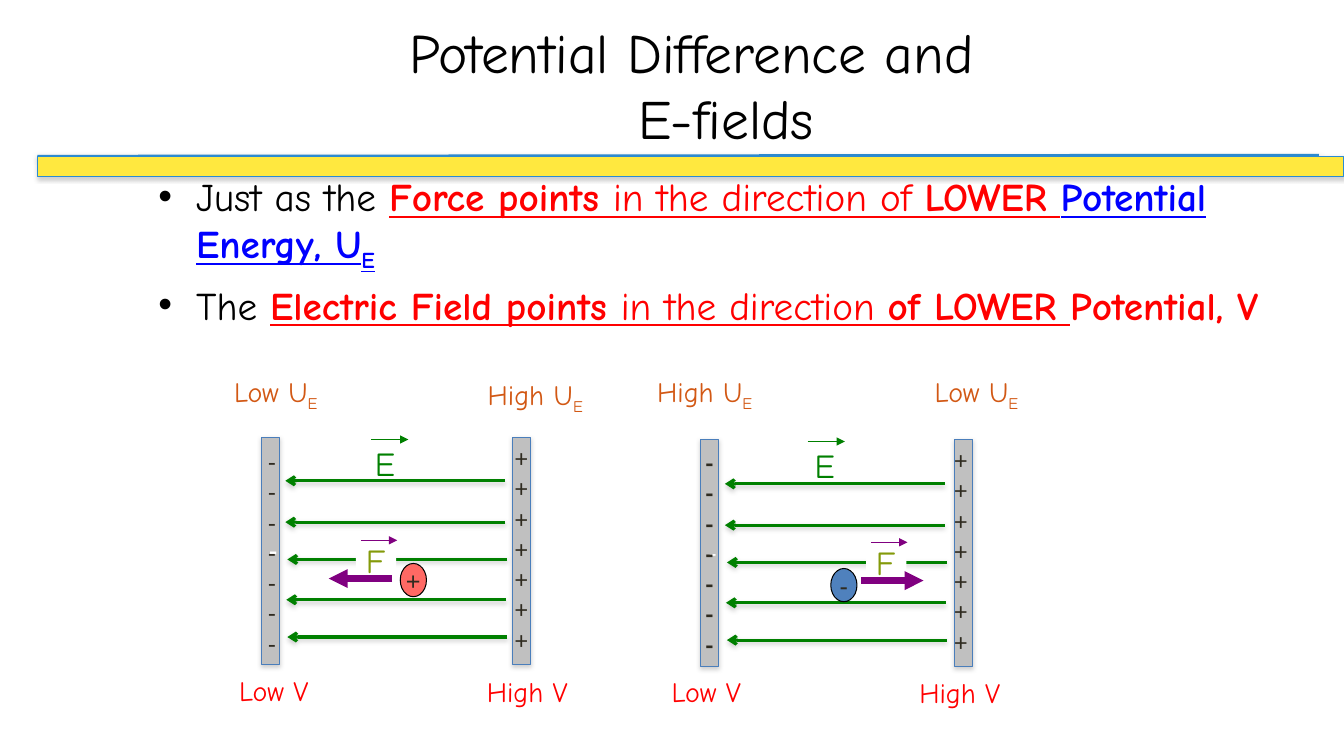
"""Build a slide on potential difference and electric fields between charged plates."""
from lxml.etree import SubElement
from pptx import Presentation
from pptx.dml.color import RGBColor
from pptx.enum.shapes import MSO_CONNECTOR, MSO_SHAPE as Kind
from pptx.enum.text import MSO_ANCHOR as Anchor, MSO_AUTO_SIZE as AutoSize, PP_ALIGN as Align
from pptx.oxml import parse_xml
from pptx.oxml.ns import qn
from pptx.util import Pt

PX = 9144
COMIC = "Comic Neue"
COLORS = {
    "black": "000000", "white": "FFFFFF", "red": "FF0000", "blue": "0000FF",
    "rule": "2B8BD2", "yellow": "FFE83F", "plate": "C0C0C0", "plate edge": "4A7EBB",
    "sign": "2F2B20", "field": "008000", "force": "800080", "force label": "849A0A",
    "energy": "D25814", "positive": "FF6964", "negative": "4F81BD",
}
COLORS = {name: RGBColor.from_string(value) for name, value in COLORS.items()}
NO_EFFECT = '<a:effectLst xmlns:a="http://schemas.openxmlformats.org/drawingml/2006/main"/>'
SHADOW = NO_EFFECT.replace("/>", (
    '><a:outerShdw blurRad="40000" dist="22000" dir="5400000" rotWithShape="0">'
    '<a:srgbClr val="808080"><a:alpha val="36000"/></a:srgbClr></a:outerShdw></a:effectLst>'))

deck = Presentation()
deck.slide_width, deck.slide_height = 1333 * PX, 750 * PX
page = deck.slides.add_slide(deck.slide_layouts[1])


def add_box(place, text="", color="sign", size=18, font="Calibri", bold=False, align=Align.CENTER,
            kind=None, fill=None, edge=None, shadow=False, wrap=False):
    place = [length * PX for length in place]
    if kind is None:
        box = page.shapes.add_textbox(*place)
        box.text_frame.auto_size = AutoSize.SHAPE_TO_FIT_TEXT
    else:
        box = page.shapes.add_shape(kind, *place)
        box.text_frame.vertical_anchor = Anchor.MIDDLE
        box.line.color.rgb = COLORS[edge]
        box.line.width = Pt(0.75)
        if shadow:
            box._element.spPr.append(parse_xml(SHADOW))
        else:
            box.shadow.inherit = False
    if fill:
        box.fill.solid()
        box.fill.fore_color.rgb = COLORS[fill]
    box.text_frame.word_wrap = wrap
    box.text_frame.text = text
    for para in box.text_frame.paragraphs:
        para.alignment = align
        para.font.name, para.font.size, para.font.bold = font, Pt(size), bold
        para.font.color.rgb = COLORS[color]
    return box


def add_line(start, end, color, width, head=None, shadow=False):
    ends = [length * PX for length in (*start, *end)]
    line = page.shapes.add_connector(MSO_CONNECTOR.STRAIGHT, *ends)
    line.line.color.rgb = COLORS[color]
    line.line.width = Pt(width)
    if head:
        SubElement(line.line._get_or_add_ln(), qn("a:tailEnd"), type=head)
    line._element.spPr.append(parse_xml(SHADOW if shadow else NO_EFFECT))


add_line((37, 155), (1308, 154), "rule", 2, shadow=True)
add_box((37, 155, 1296, 20), kind=Kind.RECTANGLE, fill="yellow", edge="rule", shadow=True)

title, body = page.placeholders
for holder, place in ((title, (245, 25, 900, 117)), (body, (147, 166, 1133, 259))):
    holder.left, holder.top, holder.width, holder.height = [length * PX for length in place]
    holder.text_frame.auto_size = AutoSize.NONE
title.text_frame.text = "Potential Difference and \v\tE-fields"
title.text_frame.vertical_anchor = Anchor.MIDDLE
heading = title.text_frame.paragraphs[0]
heading.alignment = Align.CENTER
heading.font.name, heading.font.size = COMIC, Pt(39.6)
heading.font.color.rgb = COLORS["black"]

bullets = [
    [("Just as the ", "black", False, False), ("Force points ", "red", True, True),
     ("in the direction of ", "red", False, True), ("LOWER ", "red", True, True),
     ("Potential Energy, U", "blue", True, True), ("E", "blue", True, True)],
    [("The ", "black", False, False), ("Electric Field points ", "red", True, True),
     ("in the direction ", "red", False, True), ("of LOWER ", "red", True, True),
     ("Potential, V", "red", True, False)],
]
body.text_frame.text = "\n".join("" for bullet in bullets)
for index, (para, bullet) in enumerate(zip(body.text_frame.paragraphs, bullets)):
    para.space_before = Pt(5.6 * index)
    para.font.name, para.font.size = COMIC, Pt(28)
    for text, color, bold, underline in bullet:
        span = para.add_run()
        span.text = text
        span.font.bold, span.font.underline = bold, underline
        span.font.color.rgb = COLORS[color]
        if text == "E":
            span._r.get_or_add_rPr().set("baseline", "-25000")

panels = [
    dict(plates=(259, 508), top=434, signs=((256, 438), (501, 434)), bold=False, inner_bold=True,
         field=(283, 477), label=362, vector=368, charge=("+", "positive", 397, 559),
         force_label=353, force=(389, 326)),
    dict(plates=(695, 947), top=436, signs=((690, 439), (937, 436)), bold=True, inner_bold=False,
         field=(719, 480), label=798, vector=801, charge=("-", "negative", 824, 564),
         force_label=859, force=(854, 916)),
]
for panel in panels:
    top = panel["top"]
    for x, mark in zip(panel["plates"], ("-", "")):
        add_box((x, top, 18, 225), mark, "white", bold=panel["inner_bold"], kind=Kind.RECTANGLE,
                fill="plate", edge="plate edge", shadow=True, wrap=True)
    for (x, y), mark, width, bold in zip(panel["signs"], "-+", (28, 33), (panel["bold"], False)):
        add_box((x, y, width, 220), "\n".join(mark * 7), bold=bold, align=Align.LEFT)

    left, first = panel["field"]
    for dx, dy in ((0, 0), (0, 41), (2, 78), (1, 118), (2, 155)):
        add_line((left + dx + 218, first + dy), (left + dx, first + dy), "field", 2.25, "arrow", True)
    add_box((panel["label"], top, 41, 50), "E", "field", 24, COMIC, align=Align.LEFT)
    add_line((panel["vector"], top + 2), (panel["vector"] + 37, top + 2), "field", 0.75, "triangle")

    mark, fill, x, y = panel["charge"]
    add_box((x, y, 26, 33), mark, font="Arial", kind=Kind.OVAL, fill=fill, edge="black")
    x = panel["force_label"]
    add_box((x, top + 97, 40, 50), "F", "force label", 24, COMIC, align=Align.LEFT, fill="white")
    add_line((x + 5, top + 102), (x + 41, top + 102), "force", 0.75, "triangle")
    start, end = panel["force"]
    add_line((start, top + 140), (end, top + 140), "force", 4.5, "triangle")

for text, x, y, width in (("Low V", 224, 663, 95), ("High V", 470, 664, 106),
                          ("Low V", 653, 664, 95), ("High V", 899, 665, 106)):
    add_box((x, y, width, 43), text, "red", 20, COMIC)
for text, x, y, width in (("Low U", 219, 367, 109), ("High U", 471, 370, 120),
                          ("High U", 639, 367, 120), ("Low U", 914, 367, 109)):
    energy = add_box((x, y, width, 77), text, "energy", 20, COMIC, wrap=True)
    span = energy.text_frame.paragraphs[0].add_run()
    span.text = "E"
    span._r.get_or_add_rPr().set("baseline", "-25000")

deck.save("out.pptx")
